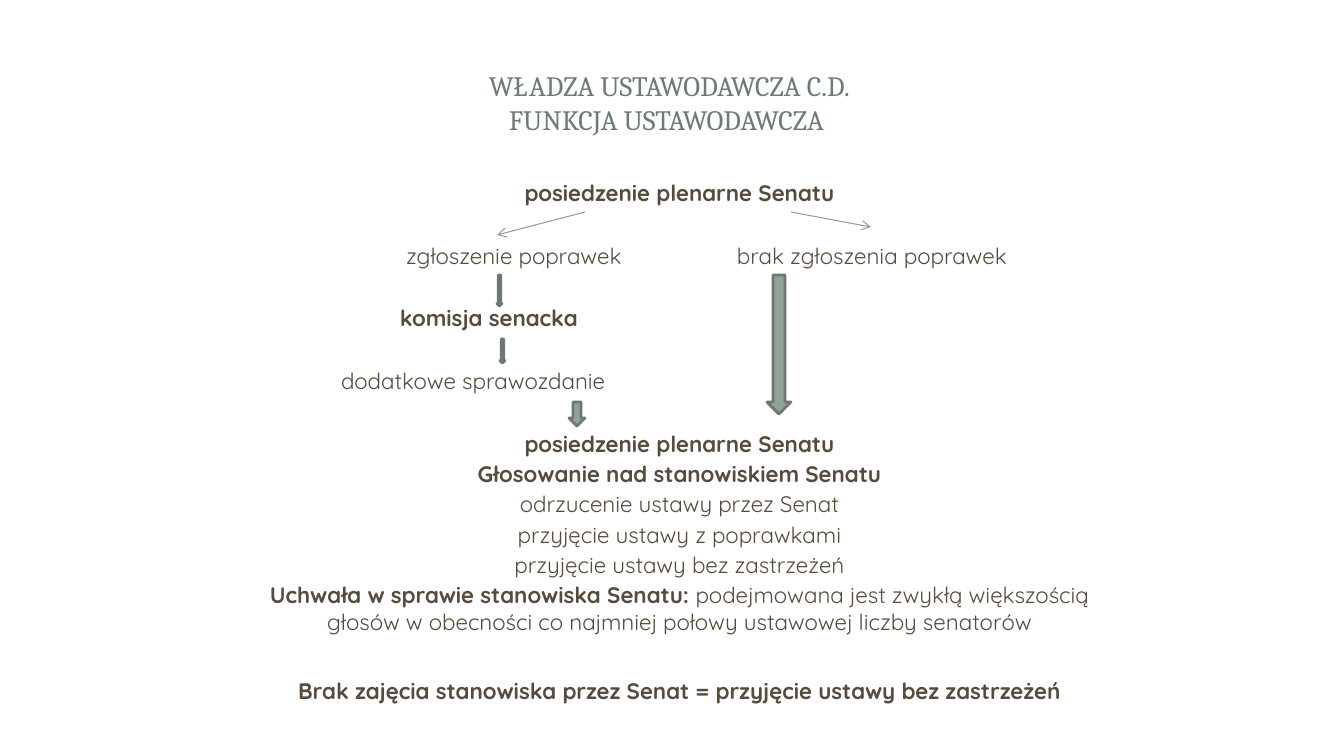
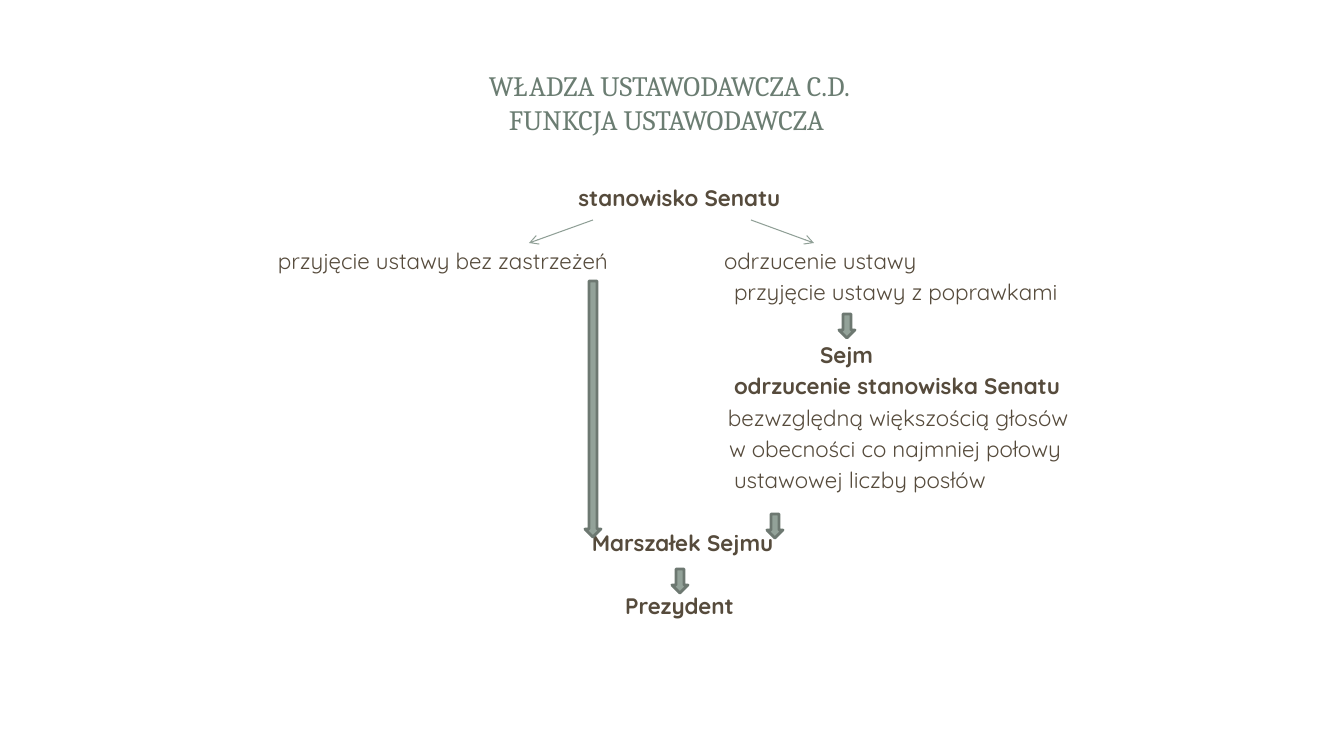
from dataclasses import dataclass
from lxml.etree import SubElement as Sub
from pptx import Presentation
from pptx.dml.color import RGBColor as Rgb
from pptx.enum.shapes import MSO_CONNECTOR as Conn, MSO_SHAPE as Shape
from pptx.enum.text import MSO_ANCHOR as Anchor, PP_ALIGN as Align
from pptx.oxml.ns import qn
from pptx.util import Emu, Pt


@dataclass(frozen=True)
class Theme:
    title: Rgb = Rgb.from_string("6B7D72")
    text: Rgb = Rgb.from_string("564B3C")
    thin: Rgb = Rgb.from_string("8F9F96")
    fill: Rgb = Rgb.from_string("93A299")
    edge: Rgb = Rgb.from_string("6D7871")
    head: str = "Cambria"
    body: str = "Quicksand"
    big: int = 20
    small: int = 16
    gap: float = 2.4
    row: float = 31.36


T = Theme()


def px(n):
    return Emu(round(n * 914400 / 100.8))


def write(slide, box, paras, align, font, size, color, gap=0):
    frame = slide.shapes.add_textbox(*map(px, box)).text_frame
    frame.word_wrap = True
    frame.vertical_anchor = Anchor.MIDDLE if font == T.head else Anchor.TOP
    frame.margin_left = frame.margin_right = 0
    frame.margin_top = frame.margin_bottom = 0
    for i, runs in enumerate(paras):
        para = frame.add_paragraph() if i else frame.paragraphs[0]
        para.alignment = align
        para.space_before = Pt(gap if i else 0)
        for text, bold in runs:
            run = para.add_run()
            run.text = text
            run.font.name = font
            run.font.size = Pt(size)
            run.font.bold = bold
            run.font.color.rgb = color


LEFT, WIDE, LINE = 242, 875, 28
TITLE = ["WŁADZA USTAWODAWCZA C.D.", "FUNKCJA USTAWODAWCZA "]

SENATE = {
    "top": 179,
    "mid": [
        (0, [[("posiedzenie plenarne Senatu", True)]]),
        (8, [
            [("posiedzenie plenarne Senatu", True)],
            [("Głosowanie nad stanowiskiem Senatu", True)],
            [("odrzucenie ustawy przez Senat", False)],
            [("przyjęcie ustawy z poprawkami", False)],
            [("przyjęcie ustawy bez zastrzeżeń", False)],
            [("Uchwała w sprawie stanowiska Senatu: ", True),
             ("podejmowana jest zwykłą większością głosów w obecności "
              "co najmniej połowy ustawowej liczby senatorów", False)],
        ]),
        (16 - 0.12, [[("Brak zajęcia stanowiska przez Senat = "
                       "przyjęcie ustawy bez zastrzeżeń", True)]]),
    ],
    "side": [
        (406, 2, "zgłoszenie poprawek", False),
        (737, 2, "brak zgłoszenia poprawek", False),
        (400, 4, "komisja senacka", True),
        (341, 6, "dodatkowe sprawozdanie", False),
    ],
    "lines": [(585, 212, 497, 235), (791, 212, 871, 227)],
    "arrows": [(497, 275, 5, 31), (500, 339, 5, 24),
               (569, 402, 16, 24), (767, 275, 24, 139)],
}

SEJM = {
    "top": 184,
    "mid": [
        (0, [[("stanowisko Senatu", True)]]),
        (11, [[(" Marszałek Sejmu", True)]]),
        (13, [[("Prezydent", True)]]),
    ],
    "side": [
        (278, 2, "przyjęcie ustawy bez zastrzeżeń", False),
        (724, 2, "odrzucenie ustawy", False),
        (734, 3, "przyjęcie ustawy z poprawkami", False),
        (820, 5, "Sejm", True),
        (734, 6, "odrzucenie stanowiska Senatu", True),
        (728, 7, "bezwzględną większością głosów", False),
        (729, 8, "w obecności co najmniej połowy", False),
        (734, 9, "ustawowej liczby posłów", False),
    ],
    "lines": [(593, 220, 529, 243), (751, 220, 814, 243)],
    "arrows": [(839, 314, 16, 24), (585, 281, 16, 256),
               (767, 514, 16, 24), (672, 569, 16, 24)],
}

deck = Presentation()
deck.slide_width, deck.slide_height = px(1344), px(756)

for page in (SENATE, SEJM):
    slide = deck.slides.add_slide(deck.slide_layouts[6])
    write(slide, (62, 45, 1215, 115), [[(t, False)] for t in TITLE],
          Align.CENTER, T.head, T.big, T.title)

    for row, paras in page["mid"]:
        top = page["top"] + round(row * T.row)
        high = round(len(paras) * T.row)
        write(slide, (LEFT, top, WIDE, high), paras,
              Align.CENTER, T.body, T.small, T.text, T.gap)

    for left, row, text, bold in page["side"]:
        top = page["top"] + round(row * T.row)
        write(slide, (left, top, 380, LINE), [[(text, bold)]],
              Align.LEFT, T.body, T.small, T.text)

    for ends in page["lines"]:
        link = slide.shapes.add_connector(Conn.STRAIGHT, *map(px, ends))
        link.line.color.rgb = T.thin
        link.line.width = Pt(0.75)
        Sub(link.line._get_or_add_ln(), qn("a:tailEnd"), type="arrow")
        Sub(link._element.spPr, qn("a:effectLst"))

    for box in page["arrows"]:
        arrow = slide.shapes.add_shape(Shape.DOWN_ARROW, *map(px, box))
        arrow.shadow.inherit = False
        arrow.fill.solid()
        arrow.fill.fore_color.rgb = T.fill
        arrow.line.color.rgb = T.edge
        arrow.line.width = Pt(2)

deck.save("out.pptx")
